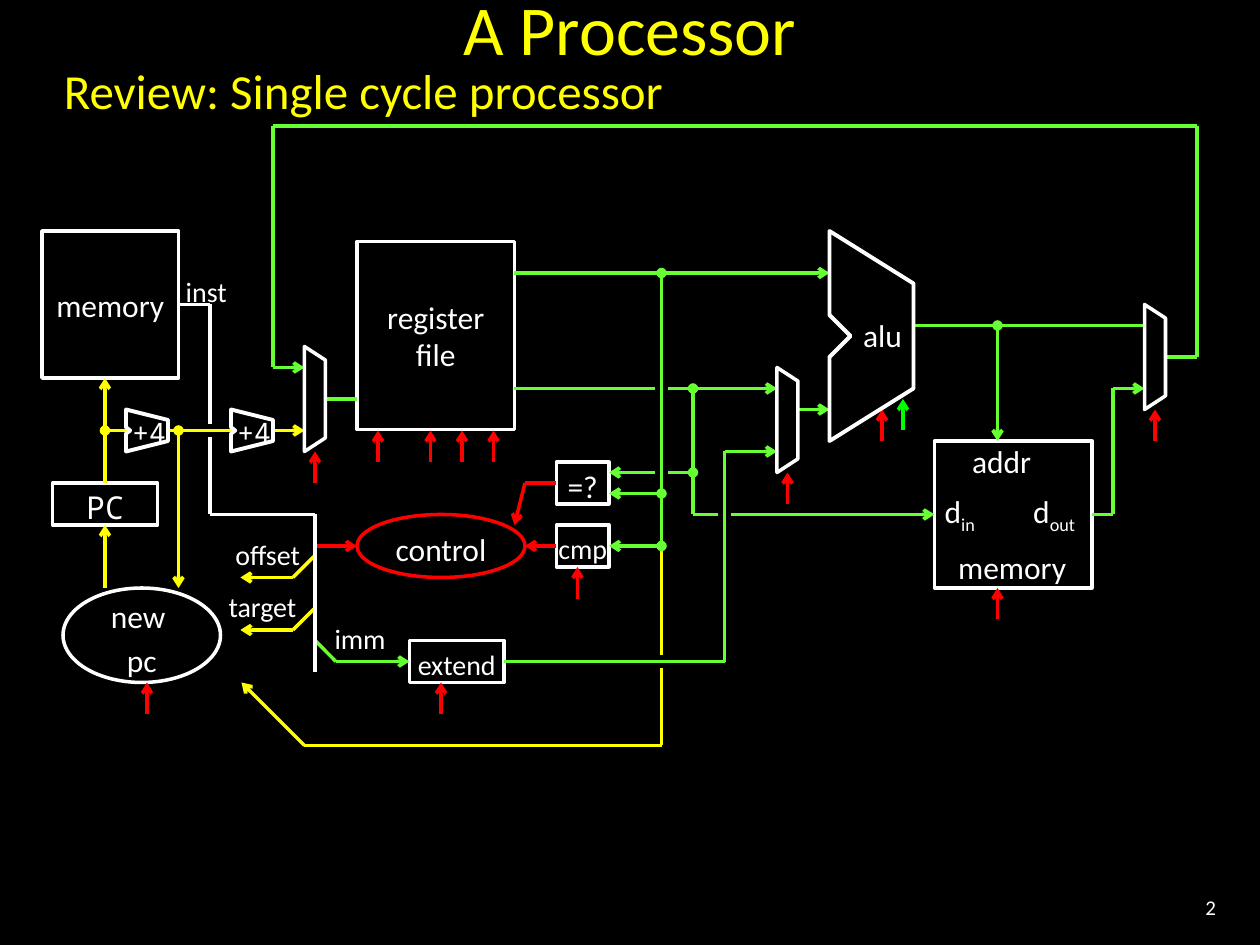
from itertools import pairwise

from lxml.etree import SubElement
from pptx import Presentation
from pptx.dml.color import RGBColor
from pptx.enum.shapes import MSO_CONNECTOR, MSO_SHAPE
from pptx.enum.text import MSO_ANCHOR as Anchor, PP_ALIGN as Align
from pptx.oxml.ns import qn
from pptx.util import Emu, Pt

PX = 7620  # EMU per px, 120 px to the inch

BLACK = RGBColor(0x00, 0x00, 0x00)
WHITE = RGBColor(0xFF, 0xFF, 0xFF)
YELLOW = RGBColor(0xFF, 0xFF, 0x00)
GREEN = RGBColor(0x66, 0xFF, 0x33)
PURE_GREEN = RGBColor(0x00, 0xFF, 0x00)
RED = RGBColor(0xFF, 0x00, 0x00)
SANS, MONO = "Calibri", "Noto Sans Mono"
RECT, OVAL = MSO_SHAPE.RECTANGLE, MSO_SHAPE.OVAL

# colour, corner points, end marks at the first and last point
WIRES = [
    (GREEN, [(1110, 340), (1140, 340), (1140, 120), (260, 120), (260, 350), (290, 350)], None, "arrow"),
    (GREEN, [(870, 310), (1090, 310)], None, None),
    (GREEN, [(310, 380), (340, 380)], None, None),
    (GREEN, [(490, 260), (790, 260)], None, "arrow"),
    (GREEN, [(490, 370), (740, 370)], None, "arrow"),
    (GREEN, [(760, 390), (790, 390)], None, "arrow"),
    (GREEN, [(660, 370), (660, 490), (890, 490)], "oval", "arrow"),
    (GREEN, [(950, 310), (950, 420)], "oval", "arrow"),
    (GREEN, [(1040, 490), (1060, 490), (1060, 370), (1090, 370)], None, "arrow"),
    (GREEN, [(300, 610), (320, 630), (390, 630)], None, "arrow"),
    (GREEN, [(660, 450), (580, 450)], "oval", "arrow"),
    (GREEN, [(630, 470), (580, 470)], "oval", "arrow"),
    (GREEN, [(630, 520), (580, 520)], None, "arrow"),
    (YELLOW, [(100, 460), (100, 360)], None, "arrow"),
    (YELLOW, [(100, 560), (100, 500)], None, "arrow"),
    (YELLOW, [(170, 410), (170, 560)], "oval", "arrow"),
    (YELLOW, [(630, 520), (630, 710), (290, 710), (230, 650)], None, "arrow"),
    (YELLOW, [(299, 530), (279, 550), (229, 550)], None, "arrow"),
    (YELLOW, [(299, 580), (279, 600), (229, 600)], None, "arrow"),
    (RED, [(300, 520), (340, 520)], None, "arrow"),
    (RED, [(530, 520), (500, 520)], None, "arrow"),
    (RED, [(530, 460), (500, 460), (490, 500)], None, "arrow"),
    (WHITE, [(170, 290), (200, 290), (200, 490), (300, 490), (300, 640)], None, None),
]
# gaps in the wires above, where the crossing wires pass over them
GAPS = [
    [(190, 410), (220, 410)],
    [(620, 630), (650, 630)],
    [(630, 360), (630, 380)],
    [(630, 440), (630, 460)],
    [(690, 480), (690, 500)],
]
CROSSING_WIRES = [
    (YELLOW, [(100, 410), (290, 410)], "oval", "arrow"),
    (GREEN, [(630, 520), (630, 260)], "oval", "oval"),
    (GREEN, [(480, 630), (690, 630), (690, 430), (740, 430)], None, "arrow"),
]
CONTROL_TIPS = [(140, 650), (300, 430), (360, 410), (410, 410), (440, 410), (470, 410),
                (420, 650), (550, 540), (750, 450), (840, 390), (950, 560), (1100, 390)]
ALU_FLAG_TIP = (860, 380)
CONTROL_LENGTH = 30

ALU = [(0, 0), (80, 50), (80, 150), (0, 200), (0, 120), (20, 100), (0, 80)]
MUX = [(0, 0), (20, 13), (20, 87), (0, 100)]
ADDER = [(0, 0), (40, 10), (40, 30), (0, 40), (0, 23), (4, 20), (0, 17)]
ALU_AT = (790, 220)
MUXES_AT = [(290, 330), (740, 350), (1090, 290)]
ADDERS_AT = [(120, 390), (220, 390)]

# preset, left/top/width/height, line colour, text, text options
BLOCKS = [
    (RECT, (40, 220, 130, 140), WHITE, "memory", dict(spacing=1)),
    (RECT, (340, 230, 150, 179), WHITE, "register\nfile", dict(spacing=1)),
    (RECT, (900, 510, 128, 54), BLACK, "memory", {}),
    (RECT, (890, 420, 150, 140), WHITE, "", {}),
    (RECT, (50, 460, 100, 40), WHITE, "PC", dict(font=MONO)),
    (RECT, (530, 440, 50, 40), WHITE, "=?", dict(side=0)),
    (RECT, (530, 500, 50, 40), WHITE, "cmp", dict(side=0, size=16)),
    (RECT, (390, 610, 90, 40), WHITE, "extend", dict(side=0, size=16)),
    (OVAL, (60, 560, 150, 90), WHITE, "new \npc", dict(wrap=False)),
    (OVAL, (340, 490, 160, 60), RED, "control", dict(wrap=False)),
]
# left/top/width/height, text, subscript, text options
LABELS = [
    ((0, 0, 1200, 53), "A Processor", "", dict(size=40, color=YELLOW, spacing=1)),
    ((49, 52, 601, 68), "Review: Single cycle processor", "",
     dict(size=28, color=YELLOW, spacing=1, align=Align.LEFT, anchor=Anchor.TOP)),
    ((1070, 840, 100, 48), "2", "", dict(size=12, spacing=1, align=Align.RIGHT)),
    ((890, 410, 128, 52), "addr", "", {}),
    ((880, 460, 68, 52), "d", "in", {}),
    ((970, 460, 68, 52), "d", "out", {}),
]
# labels wider than their boxes: left/top/width/height, text, size
TIGHT_LABELS = [
    ((810, 290, 61, 52), "alu", 18),
    ((170, 260, 53, 30), "inst", 16),
    ((220, 510, 70, 30), "offset", 16),
    ((220, 560, 60, 30), "target", 16),
    ((307, 590, 72, 30), "imm", 16),
]


def px(*values):
    return [Emu(value * PX) for value in values]


def write(shape, text, subscript="", size=18, color=WHITE, font=SANS, spacing=1.16,
          align=Align.CENTER, anchor=Anchor.MIDDLE, wrap=True, side=12, edge=6):
    """Fill a shape with one paragraph; side and edge are its insets."""
    frame = shape.text_frame
    frame.word_wrap, frame.vertical_anchor = wrap, anchor
    frame.margin_left, frame.margin_right = px(side, side)
    frame.margin_top, frame.margin_bottom = px(edge, edge)
    para = frame.paragraphs[0]
    para.alignment, para.line_spacing = align, float(spacing)

    def add(words):
        run = para.add_run()
        run.text = words
        run.font.size, run.font.name = Pt(size), font
        run.font.color.rgb = color
        return run

    for number, line in enumerate(text.split("\n")):
        if number:
            para.add_line_break()
        add(line)
    if subscript:
        add(subscript).font._element.set("baseline", "-25000")


def outline(shape, color=WHITE, width=2, fill=None):
    shape.shadow.inherit = False
    shape.line.color.rgb, shape.line.width = color, Pt(width)
    if fill is None:
        shape.fill.background()
    else:
        shape.fill.solid()
        shape.fill.fore_color.rgb = fill


def add_wire(color, points, head=None, tail=None, width=2):
    """Join the points with straight segments and mark the two ends."""
    last = len(points) - 2
    for number, (start, end) in enumerate(pairwise(points)):
        segment = shapes.add_connector(MSO_CONNECTOR.STRAIGHT, *px(*start, *end))
        segment.line.color.rgb, segment.line.width = color, Pt(width)
        line = segment.line._get_or_add_ln()
        if head and number == 0:
            SubElement(line, qn("a:headEnd"), type=head)
        if tail and number == last:
            SubElement(line, qn("a:tailEnd"), type=tail)
        SubElement(segment._element.spPr, qn("a:effectLst"))


def add_polygon(at, corners, width=2, fill=None):
    points = [(at[0] + x, at[1] + y) for x, y in corners]
    builder = shapes.build_freeform(*points[0], scale=float(PX))
    builder.add_line_segments(points[1:], close=True)
    polygon = builder.convert_to_shape()
    outline(polygon, width=width, fill=fill)
    return polygon


def add_tight_label(place, text, **options):
    """Use a bare rectangle, whose text may run past its sides unwrapped."""
    label = shapes.add_shape(RECT, *px(*place))
    label.shadow.inherit = False
    label.fill.background()
    label.line.fill.background()
    write(label, text, wrap=False, **options)
    return label


deck = Presentation()
deck.slide_width, deck.slide_height = px(1200, 900)
page = deck.slides.add_slide(deck.slide_layouts[6])
page.background.fill.solid()
page.background.fill.fore_color.rgb = BLACK
shapes = page.shapes

for preset, place, color, text, options in BLOCKS:
    block = shapes.add_shape(preset, *px(*place))
    outline(block, color, fill=BLACK if color == RED else None)
    if text:
        write(block, text, **options)

for wire in WIRES:
    add_wire(*wire)
for gap in GAPS:
    add_wire(BLACK, gap, width=7)
for wire in CROSSING_WIRES:
    add_wire(*wire)
for color, tips in ((RED, CONTROL_TIPS), (PURE_GREEN, [ALU_FLAG_TIP])):
    for x, y in tips:
        add_wire(color, [(x, y + CONTROL_LENGTH), (x, y)], tail="arrow")

add_polygon(ALU_AT, ALU, width=2.25)
for at in MUXES_AT:
    add_polygon(at, MUX)
for x, y in ADDERS_AT:
    adder = add_polygon((x, y), ADDER, width=2.25, fill=BLACK)
    sign = add_tight_label((x + 12, y + 4, 20, 30), "+4", size=16, font=MONO, side=0, edge=0)
    shapes.add_group_shape([adder, sign])

for place, text, subscript, options in LABELS:
    write(shapes.add_textbox(*px(*place)), text, subscript, **options)
for place, text, size in TIGHT_LABELS:
    add_tight_label(place, text, size=size)

deck.save("out.pptx")
